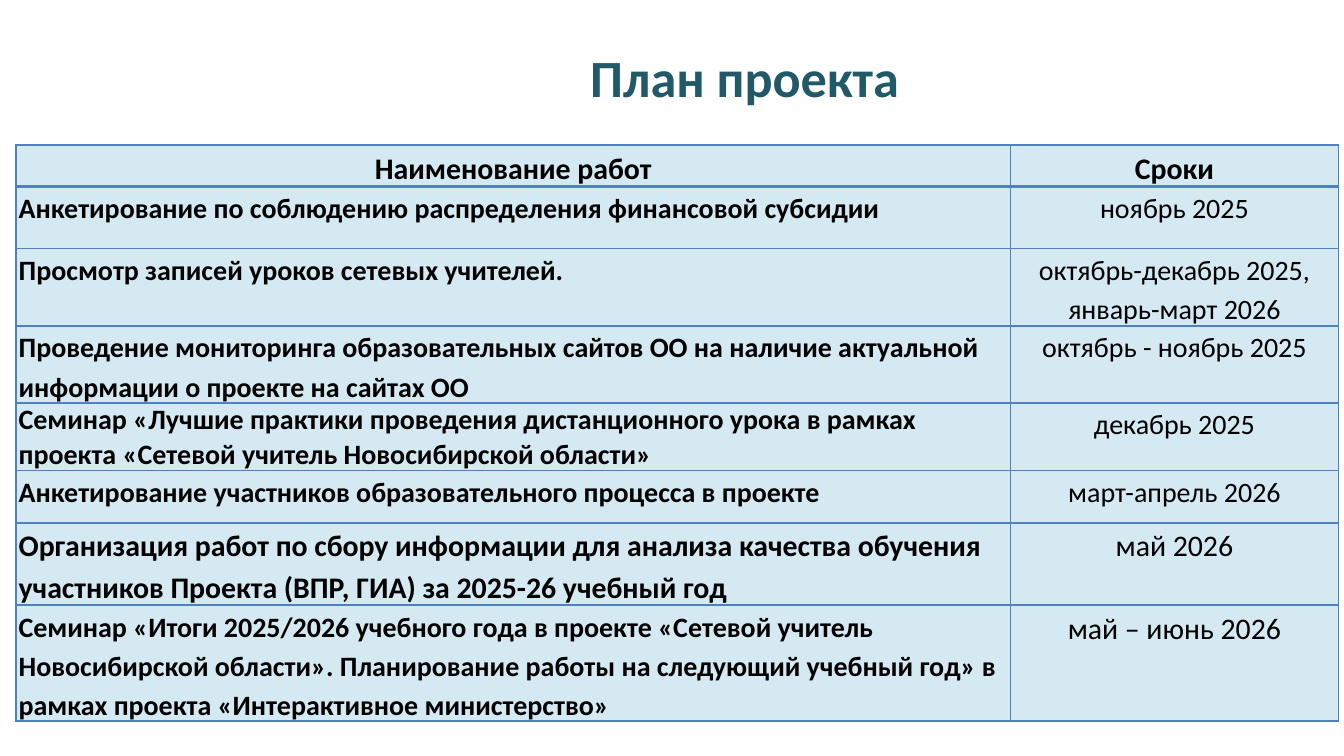
import pptx
import pptx.util
import pptx.dml.color
import pptx.enum.text
import pptx.oxml
import pptx.oxml.ns

Pt = pptx.util.Pt
RGB = pptx.dml.color.RGBColor
ALIGN = pptx.enum.text.PP_ALIGN

TEAL = RGB(0x21, 0x59, 0x68)
BLACK = RGB(0, 0, 0)
PALE = RGB(0xD4, 0xE9, 0xF1)
BLUE = RGB(0x4F, 0x81, 0xBD)
FONT = "Calibri"

HEAD = ("Наименование работ", "Сроки")
# Task, dates, task size, date size, task line spacing
PLAN = [
    ("Анкетирование по соблюдению распределения финансовой субсидии",
     "ноябрь 2025", 15, 15, 1.15),
    ("Просмотр записей уроков сетевых учителей.",
     "октябрь-декабрь 2025,\nянварь-март 2026", 15, 15, 1.15),
    ("Проведение мониторинга образовательных сайтов ОО на наличие "
     "актуальной информации о проекте на сайтах ОО",
     "октябрь - ноябрь 2025", 15, 15, 1.15),
    ("Семинар «Лучшие практики проведения дистанционного урока в рамках "
     "проекта «Сетевой учитель Новосибирской области»",
     "декабрь 2025", 15, 15, 1),
    ("Анкетирование участников образовательного процесса в проекте",
     "март-апрель 2026", 15, 15, 1.15),
    ("Организация работ по сбору информации для анализа качества обучения "
     "участников Проекта (ВПР, ГИА) за 2025-26 учебный год",
     "май 2026", 16, 16, 1.15),
    ("Семинар «Итоги 2025/2026 учебного года в проекте «Сетевой учитель "
     "Новосибирской области». Планирование работы на следующий учебный год» "
     "в рамках проекта «Интерактивное министерство»",
     "май – июнь 2026", 15, 16, 1.15),
]
WIDTHS = (532.8, 175.7)
HEIGHTS = [22.3] + [33.1] * 4 + [28.1] * 3


def style(frame, size, color, bold, align, space=1):
    for par in frame.paragraphs:
        par.alignment = align
        par.line_spacing = space
        for run in par.runs:
            run.font.name = FONT
            run.font.size = Pt(size)
            run.font.bold = bold
            run.font.color.rgb = color


def add_title(slide, text):
    box = slide.shapes.add_textbox(Pt(144.7), Pt(20.9), Pt(473), Pt(41))
    frame = box.text_frame
    frame.word_wrap = True
    frame.auto_size = pptx.enum.text.MSO_AUTO_SIZE.SHAPE_TO_FIT_TEXT
    frame.text = text
    style(frame, 28, TEAL, True, ALIGN.CENTER)
    # First-line indent
    frame.paragraphs[0]._p.get_or_add_pPr().set("indent", str(Pt(35.3)))


def add_edges(cell, top, bottom):
    props = cell._tc.get_or_add_tcPr()
    for side, width in zip("LRTB", (1, 1, top, bottom)):
        props.append(pptx.oxml.parse_xml(
            f'<a:ln{side} {pptx.oxml.ns.nsdecls("a")} w="{Pt(width)}">'
            f'<a:solidFill><a:srgbClr val="{BLUE}"/></a:solidFill>'
            f'</a:ln{side}>'))


def fill_cell(cell, text, size, bold, align, space, top=1, bottom=1):
    cell.margin_left = cell.margin_right = Pt(1.44)
    cell.margin_top = cell.margin_bottom = 0
    add_edges(cell, top, bottom)
    cell.fill.solid()
    cell.fill.fore_color.rgb = PALE
    cell.text_frame.text = text
    style(cell.text_frame, size, BLACK, bold, align, space)


def add_plan(slide):
    table = slide.shapes.add_table(
        len(HEIGHTS), len(WIDTHS), Pt(8.6), Pt(77.8),
        Pt(sum(WIDTHS)), Pt(sum(HEIGHTS))).table
    for col, width in zip(table.columns, WIDTHS):
        col.width = Pt(width)
    for row, height in zip(table.rows, HEIGHTS):
        row.height = Pt(height)

    # Header row
    for col, text in enumerate(HEAD):
        fill_cell(table.cell(0, col), text, 16, True, ALIGN.CENTER, 1.15,
                  bottom=2)

    # Tasks and dates
    for row, (task, date, size, small, space) in enumerate(PLAN, 1):
        top = 2 if row == 1 else 1
        fill_cell(table.cell(row, 0), task, size, True, ALIGN.LEFT, space, top)
        fill_cell(table.cell(row, 1), date, small, False, ALIGN.CENTER, 1.15,
                  top)


def main():
    deck = pptx.Presentation()
    deck.slide_width, deck.slide_height = Pt(720), Pt(405)
    slide = deck.slides.add_slide(deck.slide_layouts[6])
    add_title(slide, "План проекта")
    add_plan(slide)
    deck.save("out.pptx")


if __name__ == "__main__":
    main()
